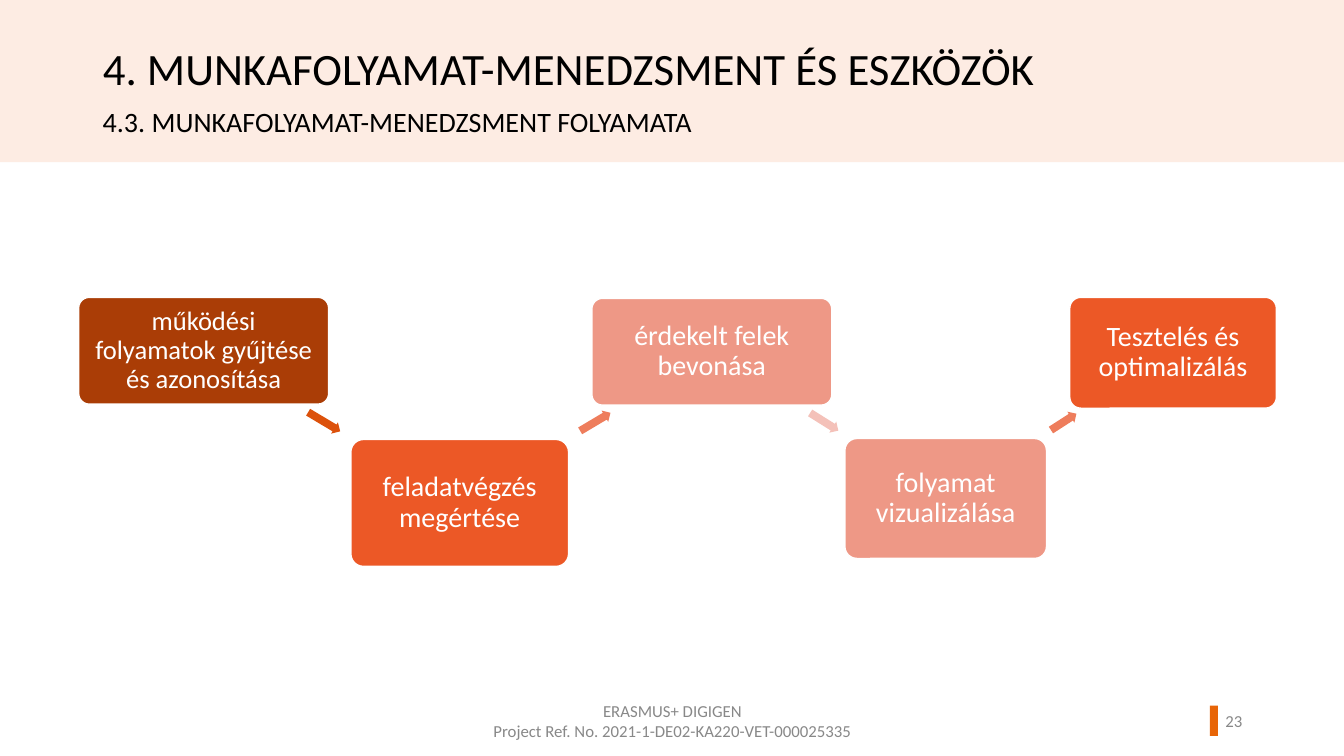
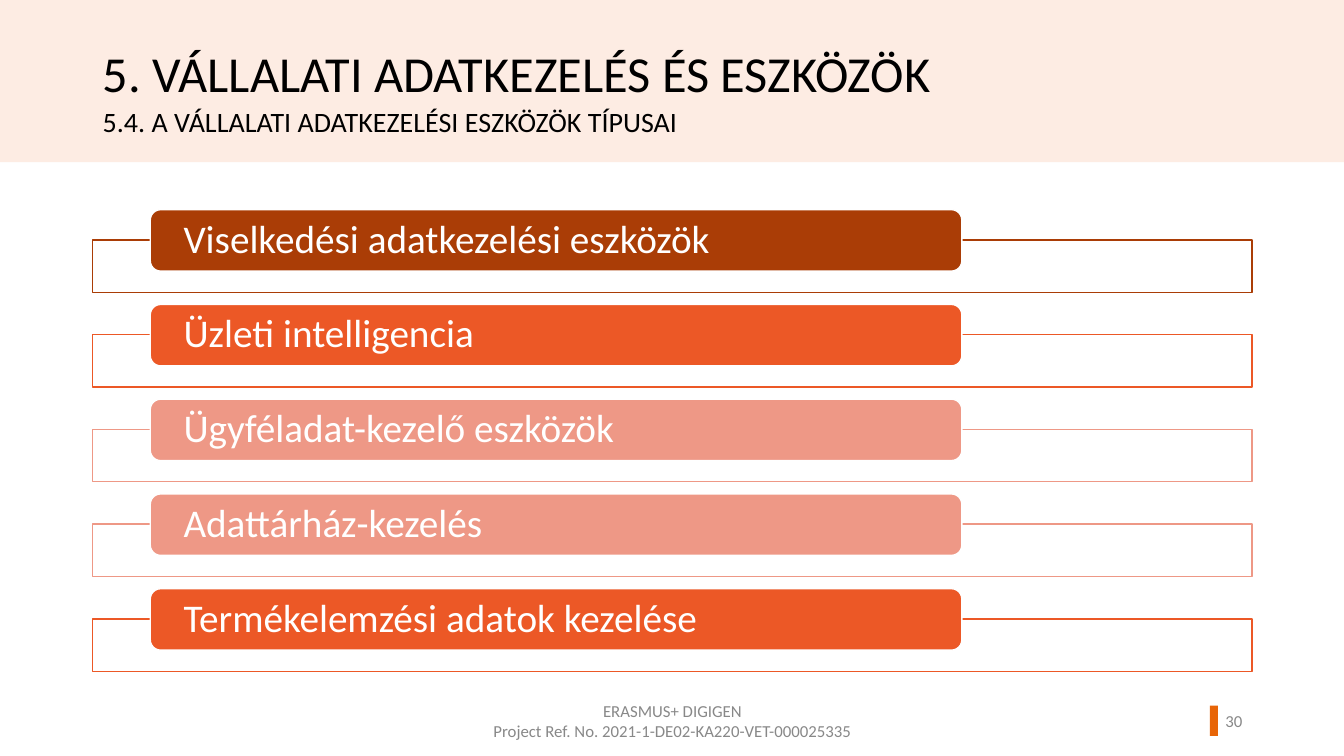
"""Build two training slides: a workflow process and a list of data tools."""
import dataclasses

import pptx
import pptx.dml.color
import pptx.enum.shapes
import pptx.enum.text
import pptx.util

Inches = pptx.util.Inches
Shape = pptx.enum.shapes.MSO_SHAPE
Align = pptx.enum.text.PP_ALIGN
Anchor = pptx.enum.text.MSO_ANCHOR


@dataclasses.dataclass(frozen=True)
class Theme:
    font: str = "Calibri"
    band: str = "FDECE3"
    marker: str = "E86507"
    brown: str = "AA3D06"
    orange: str = "EC5826"
    salmon: str = "EE9886"
    dark_arrow: str = "DC510B"
    mid_arrow: str = "EE7D5C"
    pale_arrow: str = "F4C1B9"
    white: str = "FFFFFF"
    black: str = "000000"
    grey: str = "888888"
    subtitle_size: int = 20
    footer_size: int = 12
    first_step_size: int = 19
    step_size: int = 20
    tool_size: int = 28
    line_width: int = 1


theme = Theme()
rgb = pptx.dml.color.RGBColor.from_string


def add_block(page, kind, place, fill, line=None, corner=None):
    block = page.shapes.add_shape(kind, *map(Inches, place))
    block.shadow.inherit = False
    block.fill.solid()
    block.fill.fore_color.rgb = rgb(fill)
    if line:
        block.line.color.rgb = rgb(line)
        block.line.width = pptx.util.Pt(theme.line_width)
    else:
        block.line.fill.background()
    if corner:
        block.adjustments[0] = corner
    return block


def write(box, text, size, colour, align=Align.LEFT, anchor=Anchor.TOP,
          spacing=0.9, insets=(0.1, 0.05)):
    frame = box.text_frame
    frame.text = text
    frame.word_wrap = True
    frame.auto_size = pptx.enum.text.MSO_AUTO_SIZE.NONE
    frame.vertical_anchor = anchor
    frame.margin_left = frame.margin_right = Inches(insets[0])
    frame.margin_top = frame.margin_bottom = Inches(insets[1])
    for para in frame.paragraphs:
        para.alignment = align
        para.line_spacing = spacing
        for span in para.runs:
            span.font.name = theme.font
            span.font.size = pptx.util.Pt(size)
            span.font.color.rgb = rgb(colour)


deck = pptx.Presentation()
deck.slide_width = Inches(13.33)
deck.slide_height = Inches(7.5)
layout = deck.slide_layouts.get_by_name("Title Only")

headings = [
    ("4. MUNKAFOLYAMAT-MENEDZSMENT ÉS ESZKÖZÖK", 32, 0.41,
     "4.3. MUNKAFOLYAMAT-MENEDZSMENT FOLYAMATA", "23"),
    ("5. VÁLLALATI ADATKEZELÉS ÉS ESZKÖZÖK", 36, 0.44,
     "5.4. A VÁLLALATI ADATKEZELÉSI ESZKÖZÖK TÍPUSAI", "30"),
]
footer_text = "ERASMUS+ DIGIGEN\nProject Ref. No. 2021-1-DE02-KA220-VET-000025335"
for title_text, title_size, title_top, subtitle_text, number_text in headings:
    page = deck.slides.add_slide(layout)
    title = page.shapes.title
    title.left, title.top = Inches(0.92), Inches(title_top)
    title.width, title.height = Inches(11.07), Inches(0.85)
    write(title, title_text, title_size, theme.black)
    subtitle = page.shapes.add_textbox(*map(Inches, (0.92, 1.03, 10.85, 0.85)))
    write(subtitle, subtitle_text, theme.subtitle_size, theme.black)
    footer = page.shapes.add_textbox(*map(Inches, (4.42, 6.95, 4.5, 0.4)))
    write(footer, footer_text, theme.footer_size, theme.grey,
          Align.CENTER, Anchor.MIDDLE, 1.0)
    number = page.shapes.add_textbox(*map(Inches, (11.77, 6.95, 0.65, 0.4)))
    write(number, number_text, theme.footer_size, theme.grey,
          Align.RIGHT, Anchor.MIDDLE, 1.0)

process_page, tools_page = deck.slides

band = add_block(process_page, Shape.RECTANGLE, (0, 0, 13.33, 1.61), theme.band)
marker = add_block(process_page, Shape.RECTANGLE, (12, 7, 0.08, 0.3), theme.marker)
for position, shared in enumerate((band, marker), start=2):
    layout.shapes.element.insert(position, shared.element)

steps = [
    ("működési folyamatok gyűjtése és azonosítása",
     (0.78, 2.95, 2.48, 1.06), theme.brown, theme.first_step_size),
    ("feladatvégzés megértése",
     (3.48, 4.36, 2.16, 1.26), theme.orange, theme.step_size),
    ("érdekelt felek bevonása",
     (5.87, 2.96, 2.38, 1.06), theme.salmon, theme.step_size),
    ("folyamat vizualizálása",
     (8.38, 4.35, 2, 1.19), theme.salmon, theme.step_size),
    ("Tesztelés és optimalizálás",
     (10.61, 2.95, 2.05, 1.1), theme.orange, theme.step_size),
]
for text, place, colour, size in steps:
    step = add_block(process_page, Shape.ROUNDED_RECTANGLE, place, colour,
                     theme.white, 0.1)
    write(step, text, size, theme.white, Align.CENTER, Anchor.MIDDLE,
          insets=(0.08, 0.08))

arrows = [
    (3.03, 0.37, 30.8, theme.dark_arrow),
    (5.73, 0.35, -30.8, theme.mid_arrow),
    (8.01, 0.33, 32.1, theme.pale_arrow),
    (10.4, 0.3, -32.8, theme.mid_arrow),
]
for left, width, angle, colour in arrows:
    arrow = add_block(process_page, Shape.RIGHT_ARROW, (left, 4.12, width, 0.13),
                      colour, corner=0.6)
    arrow.rotation = angle

tools = [
    ("Viselkedési adatkezelési eszközök", theme.brown),
    ("Üzleti intelligencia", theme.orange),
    ("Ügyféladat-kezelő eszközök", theme.salmon),
    ("Adattárház-kezelés", theme.salmon),
    ("Termékelemzési adatok kezelése", theme.orange),
]
for row, (text, colour) in enumerate(tools):
    top = 2.08 + row * 0.94
    add_block(tools_page, Shape.RECTANGLE, (0.92, top + 0.3, 11.5, 0.52),
              theme.white, colour)
    label = add_block(tools_page, Shape.ROUNDED_RECTANGLE, (1.49, top, 8.05, 0.61),
                      colour, theme.white, 0.17)
    write(label, text, theme.tool_size, theme.white, anchor=Anchor.MIDDLE,
          insets=(0.3, 0))

deck.save("out.pptx")
